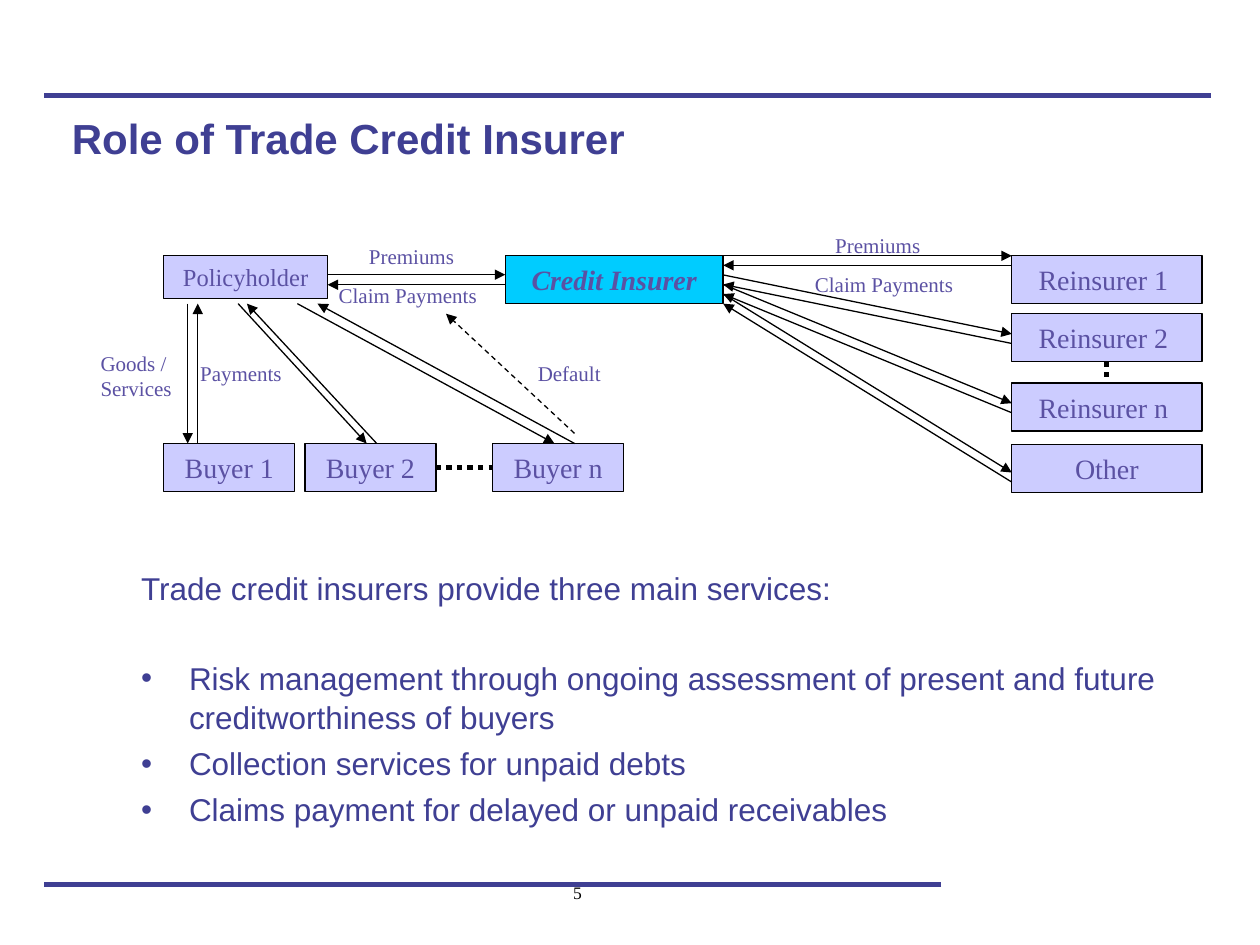
from lxml.etree import SubElement
from pptx import Presentation
from pptx.dml.color import RGBColor
from pptx.enum.dml import MSO_LINE
from pptx.enum.shapes import MSO_CONNECTOR, MSO_SHAPE
from pptx.enum.text import MSO_ANCHOR, MSO_AUTO_SIZE, PP_ALIGN
from pptx.oxml.ns import qn
from pptx.util import Inches, Pt

NAVY = RGBColor(0x3F, 0x3F, 0x93)
PURPLE = RGBColor(0x5B, 0x51, 0xA3)
LAVENDER = RGBColor(0xCC, 0xCC, 0xFF)
CYAN = RGBColor(0x00, 0xCC, 0xFF)
BLACK = RGBColor(0, 0, 0)

presentation = Presentation()
presentation.slide_width = Inches(10)
presentation.slide_height = Inches(7.5)
slide = presentation.slides.add_slide(presentation.slide_layouts[1])

# Grid: 100 columns by 75 rows
COLUMN = presentation.slide_width / 100
ROW = presentation.slide_height / 75


def write_text(paragraph, text, size, color=PURPLE, font="Times New Roman",
               bold=False, italic=False, align=PP_ALIGN.LEFT):
    paragraph.alignment = align
    run = paragraph.add_run()
    run.text = text
    run.font.size = Pt(size)
    run.font.name = font
    run.font.bold = bold
    run.font.italic = italic
    run.font.color.rgb = color


def add_line(start, end, color=BLACK, width=0.75, dash=None, arrow=False):
    line = slide.shapes.add_connector(
        MSO_CONNECTOR.STRAIGHT, int(start[0] * COLUMN), int(start[1] * ROW),
        int(end[0] * COLUMN), int(end[1] * ROW))
    line.line.color.rgb = color
    line.line.width = Pt(width)
    if dash:
        line.line.dash_style = dash
    if arrow:
        SubElement(line.line._get_or_add_ln(), qn("a:tailEnd"), type="triangle")
    SubElement(line._element.spPr, qn("a:effectLst"))
    return line


# Rules at head and foot
add_line((3.5, 7.6), (96.1, 7.6), color=NAVY, width=3)
add_line((74.7, 70.2), (3.5, 70.2), color=NAVY, width=3)

# Title and body placeholders
title = slide.shapes.title
body = slide.placeholders[1]
for placeholder, (left, top, width, height), anchor in [
    (title, (4.7, 6.2, 93.8, 9.4), MSO_ANCHOR.MIDDLE),
    (body, (10.2, 44.5, 86, 29.1), MSO_ANCHOR.TOP),
]:
    placeholder.left, placeholder.width = int(left * COLUMN), int(width * COLUMN)
    placeholder.top, placeholder.height = int(top * ROW), int(height * ROW)
    placeholder.text_frame.auto_size = MSO_AUTO_SIZE.NONE
    placeholder.text_frame.word_wrap = True
    placeholder.text_frame.vertical_anchor = anchor

write_text(title.text_frame.paragraphs[0], "Role of Trade Credit Insurer", 24,
           color=NAVY, font="Arial", bold=True)

services = [
    ("Trade credit insurers provide three main services:", 0, False),
    ("Risk management through ongoing assessment of present and future "
     "creditworthiness of buyers", 28.6, True),
    ("Collection services for unpaid debts", 3.6, True),
    ("Claims payment for delayed or unpaid receivables", 3.6, True),
]
for index, (text, space_before, bulleted) in enumerate(services):
    frame = body.text_frame
    paragraph = frame.add_paragraph() if index else frame.paragraphs[0]
    paragraph.space_before = Pt(space_before)
    paragraph.line_spacing = 1.05
    properties = paragraph._p.get_or_add_pPr()
    properties.set("marL", str(Inches(0.38)))
    properties.set("indent", str(Inches(-0.38)))
    if bulleted:
        SubElement(properties, qn("a:buChar"), char="•")
    else:
        SubElement(properties, qn("a:buNone"))
    write_text(paragraph, text, 18, color=NAVY, font="Arial")

# Party boxes: name, left, top, width, height
TOP_ROW, BUYER_ROW, BOX_HEIGHT = 20.3, 35.2, 3.8
INSURER_RIGHT, REINSURER_LEFT = 57.4, 80.3
parties = [
    ("Policyholder", 13, TOP_ROW, 13, 3.4),
    ("Credit Insurer", 40.1, TOP_ROW, 17.3, BOX_HEIGHT),
]
for name, left in [("Buyer 1", 13), ("Buyer 2", 24.2), ("Buyer n", 39.1)]:
    parties.append((name, left, BUYER_ROW, 10.4, BOX_HEIGHT))
for name, top in [("Reinsurer 1 ", TOP_ROW), ("Reinsurer 2 ", 24.9),
                  ("Reinsurer n ", 30.4), ("Other", 35.3)]:
    parties.append((name, REINSURER_LEFT, top, 15.1, BOX_HEIGHT))

boxes = {}
for name, left, top, width, height in parties:
    is_insurer = name == "Credit Insurer"
    box = slide.shapes.add_shape(
        MSO_SHAPE.RECTANGLE, int(left * COLUMN), int(top * ROW),
        int(width * COLUMN), int(height * ROW))
    box.shadow.inherit = False
    box.fill.solid()
    box.fill.fore_color.rgb = CYAN if is_insurer else LAVENDER
    box.line.color.rgb = BLACK
    box.line.width = Pt(0.75)
    box.text_frame.word_wrap = True
    box.text_frame.vertical_anchor = MSO_ANCHOR.MIDDLE
    write_text(box.text_frame.paragraphs[0], name,
               14 if name == "Policyholder" else 16,
               bold=is_insurer, italic=is_insurer, align=PP_ALIGN.CENTER)
    boxes[name] = box

# Dotted links for the parties left out
for first, first_side, second, second_side in [
    ("Buyer 2", 3, "Buyer n", 1),
    ("Reinsurer 2 ", 2, "Reinsurer n ", 0),
]:
    link = add_line((0, 0), (1, 1), width=3, dash=MSO_LINE.ROUND_DOT)
    link.begin_connect(boxes[first], first_side)
    link.end_connect(boxes[second], second_side)

# Premiums and claims between policyholder and insurer
add_line((26, 21.8), (40.1, 21.8), arrow=True)
add_line((40.1, 22.6), (26, 22.6), arrow=True)

# Goods down to each buyer, payments back up
BOX_BOTTOM = TOP_ROW + BOX_HEIGHT
for goods_from, goods_to, payment_from, payment_to in [
    (14.9, 14.9, 15.7, 15.7),
    (18.9, 29.1, 29.9, 19.6),
    (23.6, 44, 45.6, 25.2),
]:
    add_line((goods_from, BOX_BOTTOM), (goods_to, BUYER_ROW), arrow=True)
    add_line((payment_from, BUYER_ROW), (payment_to, BOX_BOTTOM), arrow=True)
add_line((45.6, 34.4), (35.4, 24.9), dash=MSO_LINE.DASH, arrow=True)

# Premiums out to each reinsurer, claims back one lane lower
LANE = BOX_HEIGHT / 5
for lane, arrival in [(0, TOP_ROW), (2, 26.5), (3, 32), (4, 37.5)]:
    departure = TOP_ROW + lane * LANE
    add_line((INSURER_RIGHT, departure), (REINSURER_LEFT, arrival), arrow=True)
    add_line((REINSURER_LEFT, arrival + LANE),
             (INSURER_RIGHT, departure + LANE), arrow=True)

# Flow labels and page number
for text, left, top, width, height, size, color in [
    ("Goods / Services", 7, 27.3, 8.7, 5, 12, PURPLE),
    ("Payments", 14.9, 28.1, 9.4, 3, 12, PURPLE),
    ("Premiums", 28.3, 18.8, 10.2, 3, 12, PURPLE),
    ("Claim Payments", 25.9, 21.9, 15, 3, 12, PURPLE),
    ("Premiums", 65.3, 18, 10.2, 3, 12, PURPLE),
    ("Claim Payments", 63.7, 21.1, 15, 3, 12, PURPLE),
    ("Default", 41.7, 28.1, 9.4, 3, 12, PURPLE),
    ("5", 44.5, 69.5, 2.7, 2.7, 10, BLACK),
]:
    label = slide.shapes.add_textbox(int(left * COLUMN), int(top * ROW),
                                     int(width * COLUMN), int(height * ROW))
    label.text_frame.word_wrap = True
    write_text(label.text_frame.paragraphs[0], text, size, color=color)

presentation.save("out.pptx")
